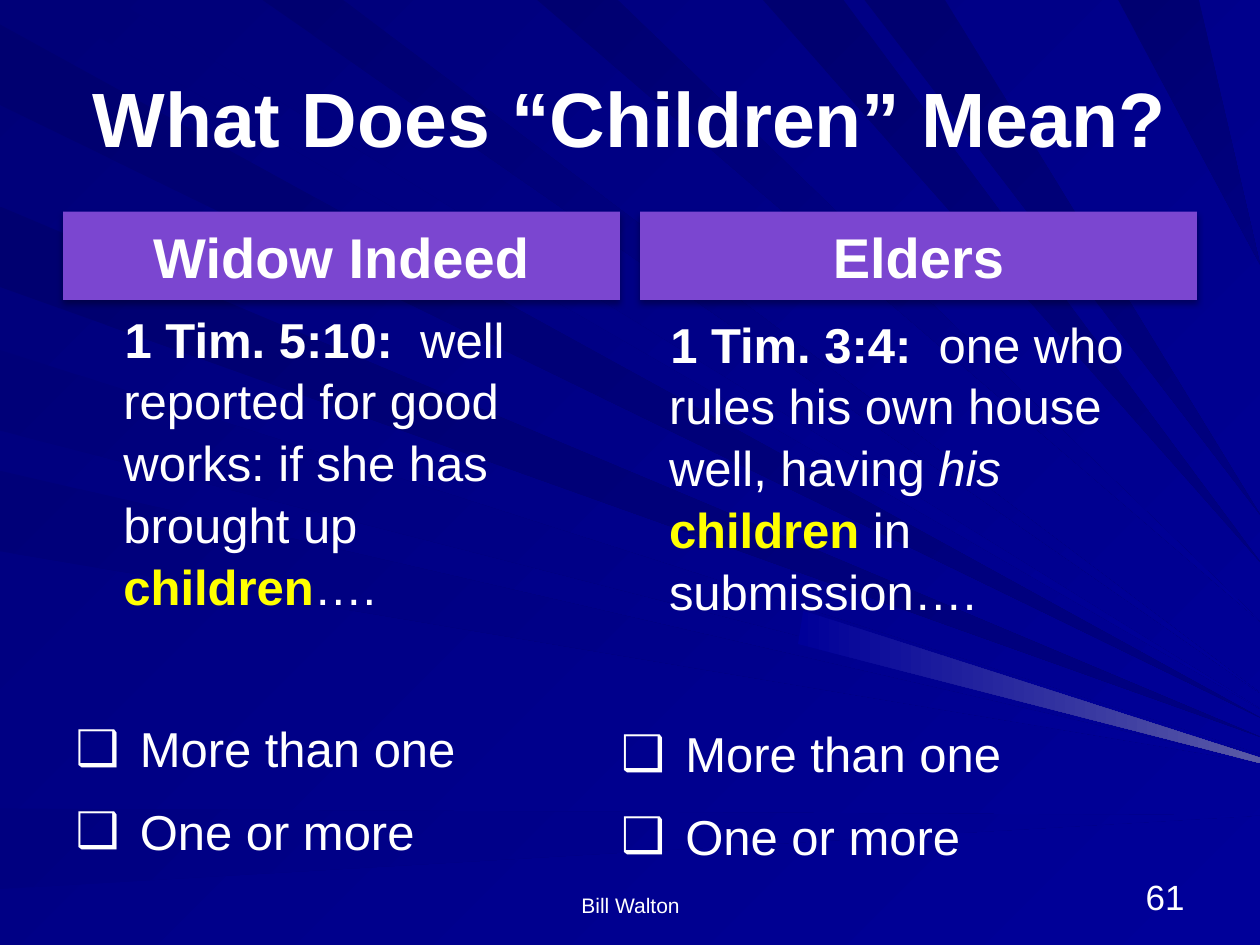
from lxml import etree
from pptx import Presentation
from pptx import util as u
from pptx.dml.color import RGBColor
from pptx.enum import text
from pptx.oxml.ns import qn

WHITE = RGBColor(0xFF, 0xFF, 0xFF)
YELLOW = RGBColor(0xFF, 0xFF, 0x00)
PURPLE = RGBColor(0x7B, 0x46, 0xD0)
MIDNIGHT = RGBColor(0, 0, 0x70)
DUSK = RGBColor(0, 0, 0x78)
NAVY = RGBColor(0, 0, 0x80)
ROYAL = RGBColor(0, 0, 0x99)
GLOW = RGBColor(0x5A, 0x5A, 0xA6)

WIDTH, HEIGHT = 720, 540
RAY_BASE = 46
RAYS = [
    (32, 466, NAVY, ROYAL), (225, 436, DUSK, ROYAL), (294, 431, DUSK, ROYAL),
    (376, 421, MIDNIGHT, NAVY), (480, 410, MIDNIGHT, NAVY), (560, 405, DUSK, ROYAL),
    (690, 396, MIDNIGHT, ROYAL), (847, 355, MIDNIGHT, ROYAL), (976, 321, MIDNIGHT, NAVY),
    (1034, 294, MIDNIGHT, NAVY), (1179, 151, MIDNIGHT, NAVY),
]

PLAIN = {"bold": False, "italic": False}
BOLD = {"bold": True, "italic": False}
ITALIC = {"bold": False, "italic": True}
KEYWORD = {"bold": True, "italic": False, "color": YELLOW}
COLUMNS = [
    ("Widow Indeed", 36, (36, 171.36, 318.24, 311.04), [
        ("1 Tim. 5:10:  ", BOLD),
        ("well reported for good works: if she has brought up ", PLAIN),
        ("children", KEYWORD), ("….", PLAIN)]),
    ("Elders", 365.76, (347.76, 174.24, 336.24, 311.04), [
        ("1 Tim. 3:4:  ", BOLD),
        ("one who rules his own house well, having ", PLAIN),
        ("his ", ITALIC), ("children", KEYWORD), (" in submission….", PLAIN)]),
]
ANSWERS = ["More than one", "One or more"]


def paint(fill, start, end, angle):
    fill.gradient()
    fill.gradient_angle = (360 - angle) % 360
    for stop, color in zip(fill.gradient_stops, (start, end)):
        stop.color.rgb = color


def write(shape, box, paragraphs, size, anchor, formats):
    shape.left, shape.top, shape.width, shape.height = [u.Pt(value) for value in box]
    frame = shape.text_frame
    frame.word_wrap = True
    frame.auto_size = text.MSO_AUTO_SIZE.NONE
    frame.vertical_anchor = anchor
    for index, runs in enumerate(paragraphs):
        paragraph = frame.add_paragraph() if index else frame.paragraphs[0]
        for name, value in {"space_before": u.Pt(0), **formats}.items():
            setattr(paragraph, name, value)
        for words, style in runs:
            run = paragraph.add_run()
            run.text = words
            style = {"color": WHITE, **style}
            run.font.color.rgb = style.pop("color")
            for name, value in {"name": "Arial", "size": u.Pt(size), **style}.items():
                setattr(run.font, name, value)
    return frame.paragraphs


presentation = Presentation()
presentation.slide_width, presentation.slide_height = u.Pt(WIDTH), u.Pt(HEIGHT)
slide = presentation.slides.add_slide(presentation.slide_layouts[4])
paint(slide.background.fill, DUSK, ROYAL, 45)

title, *bodies = slide.placeholders
wedges = []
for start, tip, dark, light in RAYS:
    base = [(max(0, edge - HEIGHT), max(0, HEIGHT - edge)) for edge in (start, start + RAY_BASE)]
    wedges.append((base + [(WIDTH, tip)], dark, light))
wedges.append(([(459, 349), (456, 368), (WIDTH, 436), (WIDTH, 433)], ROYAL, GLOW))

rays = slide.shapes.add_group_shape()
for points, dark, light in wedges:
    builder = rays.shapes.build_freeform(*points[0], scale=u.Pt(1))
    builder.add_line_segments(points[1:], close=True)
    ray = builder.convert_to_shape()
    ray.shadow.inherit = False
    ray.line.fill.background()
    paint(ray.fill, dark, light, 0 if light == GLOW else 45)
title.element.addprevious(rays.element)

middle, top, bottom = text.MSO_ANCHOR.MIDDLE, text.MSO_ANCHOR.TOP, text.MSO_ANCHOR.BOTTOM
centred = {"alignment": text.PP_ALIGN.CENTER}
write(title, (36, 21.6, 648, 90), [[("What Does “Children” Mean?", BOLD)]], 44, middle, centred)

for (heading, left, box, verse), header, body in zip(COLUMNS, bodies[::2], bodies[1::2]):
    write(header, (left, 120.96, 318.24, 50.4), [[(heading, BOLD)]], 32, middle, centred)
    header.fill.solid()
    header.fill.fore_color.rgb = PURPLE
    effects = etree.SubElement(header.element.spPr, qn("a:effectLst"))
    shadow = etree.SubElement(effects, qn("a:outerShdw"), blurRad=str(u.Pt(3.5)),
                              dist=str(u.Pt(2.2)), dir="5400000", rotWithShape="0")
    black = etree.SubElement(shadow, qn("a:srgbClr"), val="000000")
    etree.SubElement(black, qn("a:alpha"), val="32000")

    paragraphs = write(body, box, [verse] + [[(answer, PLAIN)] for answer in ANSWERS], 28, top,
                       {"space_after": u.Pt(12), "line_spacing": 1.05})
    paragraphs[1].space_before = u.Pt(45.7)
    for index, paragraph in enumerate(paragraphs):
        properties = paragraph._p.get_or_add_pPr()
        margin, indent = (36.72, -36.72) if index else (27.36, 0.72)
        properties.set("marL", str(u.Pt(margin)))
        properties.set("indent", str(u.Pt(indent)))
        if index:
            bullet_color = etree.SubElement(properties, qn("a:buClr"))
            etree.SubElement(bullet_color, qn("a:srgbClr"), val=str(WHITE))
            etree.SubElement(properties, qn("a:buChar"), char="❑")
        else:
            etree.SubElement(properties, qn("a:buNone"))

for words, box, size, alignment in [
    ("Bill Walton", (246.24, 491.76, 228.24, 36), 12, text.PP_ALIGN.CENTER),
    ("61", (516.24, 491.76, 167.76, 36), 20, text.PP_ALIGN.RIGHT),
]:
    footer = slide.shapes.add_textbox(0, 0, 0, 0)
    write(footer, box, [[(words, PLAIN)]], size, bottom, {"alignment": alignment})

presentation.save("out.pptx")
